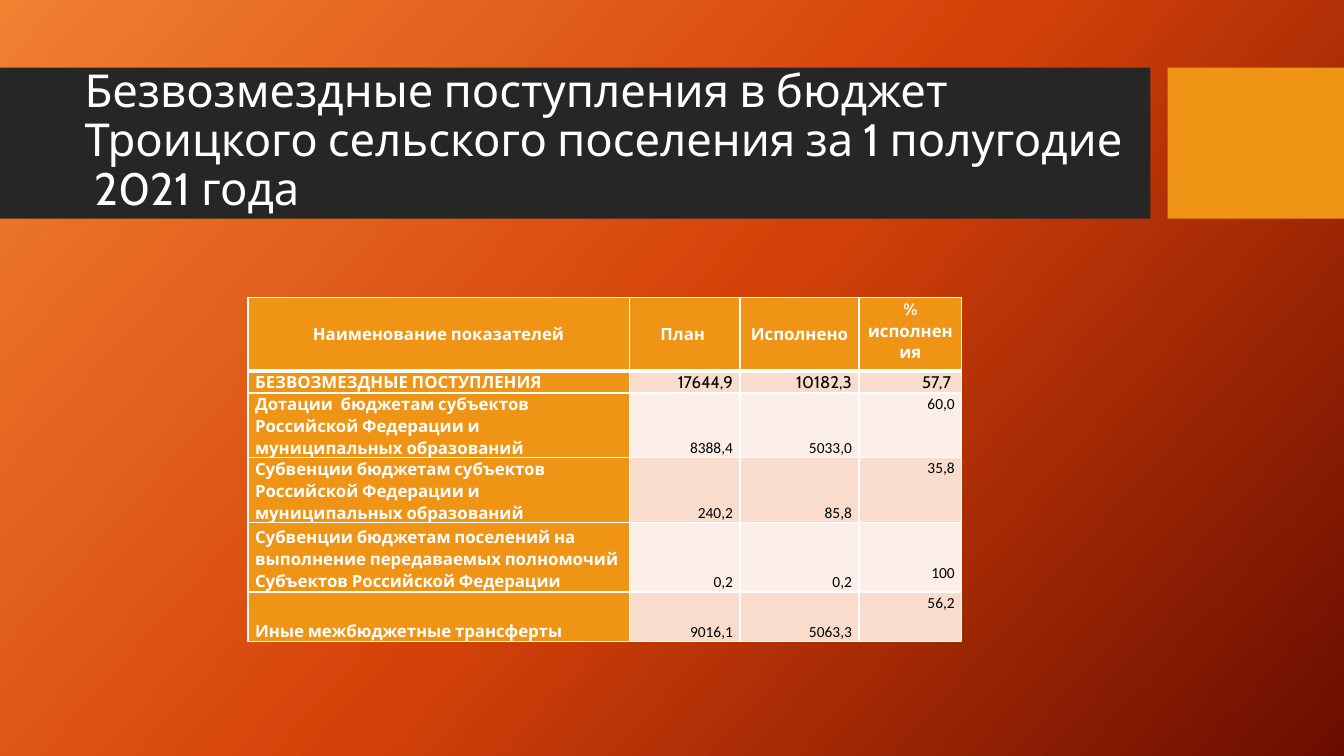
from pptx import Presentation
from pptx.dml.color import RGBColor
from pptx.enum.shapes import MSO_SHAPE
from pptx.enum.text import MSO_ANCHOR, PP_ALIGN
from pptx.oxml import parse_xml
from pptx.oxml.ns import nsdecls
from pptx.util import Inches, Pt

RECTANGLE = MSO_SHAPE.RECTANGLE
TOP, MIDDLE, BOTTOM = MSO_ANCHOR.TOP, MSO_ANCHOR.MIDDLE, MSO_ANCHOR.BOTTOM
LEFT, CENTER, RIGHT = PP_ALIGN.LEFT, PP_ALIGN.CENTER, PP_ALIGN.RIGHT

COLORS = {
    "white": "FFFFFF", "black": "000000", "band": "262626", "accent": "F09415",
    "odd_row": "F9DCCC", "even_row": "FCEEE8",
    "glow": "F18031", "flame": "D54209", "ember": "6A0D00",
}


def write_paragraph(paragraph, text, align, spacing, size, font, color, bold):
    paragraph.text = text
    paragraph.alignment = align
    paragraph.line_spacing = spacing
    values = {"size": Pt(size), "name": font, "bold": bold}
    for attribute, value in values.items():
        setattr(paragraph.font, attribute, value)
    paragraph.font.color.rgb = RGBColor.from_string(COLORS[color])


def add_borders(cell, widths):
    """Draw white cell edges; widths are points for left, right, top, bottom."""
    properties = cell._tc.get_or_add_tcPr()
    for index, (side, width) in enumerate(zip("LRTB", widths)):
        properties.insert(index, parse_xml(
            f'<a:ln{side} {nsdecls("a")} w="{Pt(width)}"><a:solidFill>'
            f'<a:srgbClr val="{COLORS["white"]}"/></a:solidFill></a:ln{side}>'))


presentation = Presentation()
presentation.slide_width = Inches(13.33)
presentation.slide_height = Inches(7.5)
slide = presentation.slides.add_slide(presentation.slide_layouts[6])

# Background gradient
stops = "".join(
    f'<a:gs pos="{position * 1000}"><a:srgbClr val="{COLORS[name]}"/></a:gs>'
    for position, name in ((0, "glow"), (50, "flame"), (100, "ember")))
slide._element.cSld.insert(0, parse_xml(
    f'<p:bg {nsdecls("p", "a")}><p:bgPr><a:gradFill rotWithShape="1">'
    f'<a:gsLst>{stops}</a:gsLst><a:lin ang="{42 * 60000}" scaled="0"/>'
    '</a:gradFill><a:effectLst/></p:bgPr></p:bg>'))

# Title band
for left, width, color in ((0, 11.41, "band"), (11.58, 1.75, "accent")):
    shape = slide.shapes.add_shape(
        RECTANGLE, Inches(left), Inches(0.67), Inches(width), Inches(1.5))
    shape.shadow.inherit = False
    shape.fill.solid()
    shape.fill.fore_color.rgb = RGBColor.from_string(COLORS[color])
    shape.line.fill.background()

title = slide.shapes.add_textbox(
    Inches(0.74), Inches(0.82), Inches(10.51), Inches(1.18)).text_frame
title.word_wrap = True
title.vertical_anchor = MIDDLE
write_paragraph(
    title.paragraphs[0],
    "Безвозмездные поступления в бюджет Троицкого сельского поселения "
    "за 1 полугодие  2021 года",
    LEFT, 0.9, 32.4, "Cabin", "white", False)

# Budget table
column_widths = [3.78, 1.1, 1.18, 1.02]
row_heights = [0.73, 0.22, 0.52, 0.58, 0.69, 0.49]
budget_rows = [
    ["Наименование показателей", "План ", "Исполнено", "%\nисполнения"],
    ["БЕЗВОЗМЕЗДНЫЕ ПОСТУПЛЕНИЯ", "17644,9", "10182,3", "57,7 "],
    ["Дотации  бюджетам субъектов Российской Федерации и муниципальных образований",
     "8388,4", "5033,0", "60,0"],
    ["Субвенции бюджетам субъектов Российской Федерации и муниципальных образований",
     "240,2", "85,8", "35,8"],
    ["Субвенции бюджетам поселений на выполнение передаваемых полномочий "
     "Субъектов Российской Федерации", "0,2", "0,2", "100"],
    ["Иные межбюджетные трансферты", "9016,1", "5063,3", "56,2"],
]
TOTAL_ROW, LOWERED_ROW, PERCENT_COLUMN = 1, 4, 3

table = slide.shapes.add_table(
    len(row_heights), len(column_widths), Inches(2.46), Inches(2.95),
    Inches(sum(column_widths)), Inches(sum(row_heights))).table
table.first_row = False
table.horz_banding = False
for column, width in zip(table.columns, column_widths):
    column.width = Inches(width)
for row, height in zip(table.rows, row_heights):
    row.height = Inches(height)

for row_index, texts in enumerate(budget_rows):
    for column_index, text in enumerate(texts):
        cell = table.cell(row_index, column_index)
        is_header = row_index == 0
        is_label = is_header or column_index == 0
        is_lowered = row_index == LOWERED_ROW and column_index == PERCENT_COLUMN

        cell.margin_left = cell.margin_right = Inches(0.07)
        cell.margin_top = 0
        cell.margin_bottom = Inches(0.09 if is_lowered else 0)
        if column_index == PERCENT_COLUMN and not is_lowered:
            cell.vertical_anchor = TOP
        else:
            cell.vertical_anchor = MIDDLE if is_header else BOTTOM

        band = "odd_row" if row_index % 2 else "even_row"
        cell.fill.solid()
        cell.fill.fore_color.rgb = RGBColor.from_string(
            COLORS["accent" if is_label else band])
        add_borders(cell, (1, 1, 3 if row_index == 1 else 1, 3 if is_header else 1))

        align = CENTER if is_header else LEFT if is_label else RIGHT
        size, font = (12, "Cabin") if is_label or row_index == TOTAL_ROW else (11, "Calibri")
        color = "white" if is_label else "black"
        cell.text = text
        for paragraph in cell.text_frame.paragraphs:
            write_paragraph(paragraph, paragraph.text, align, 1.07,
                            size, font, color, is_label)

presentation.save("out.pptx")
